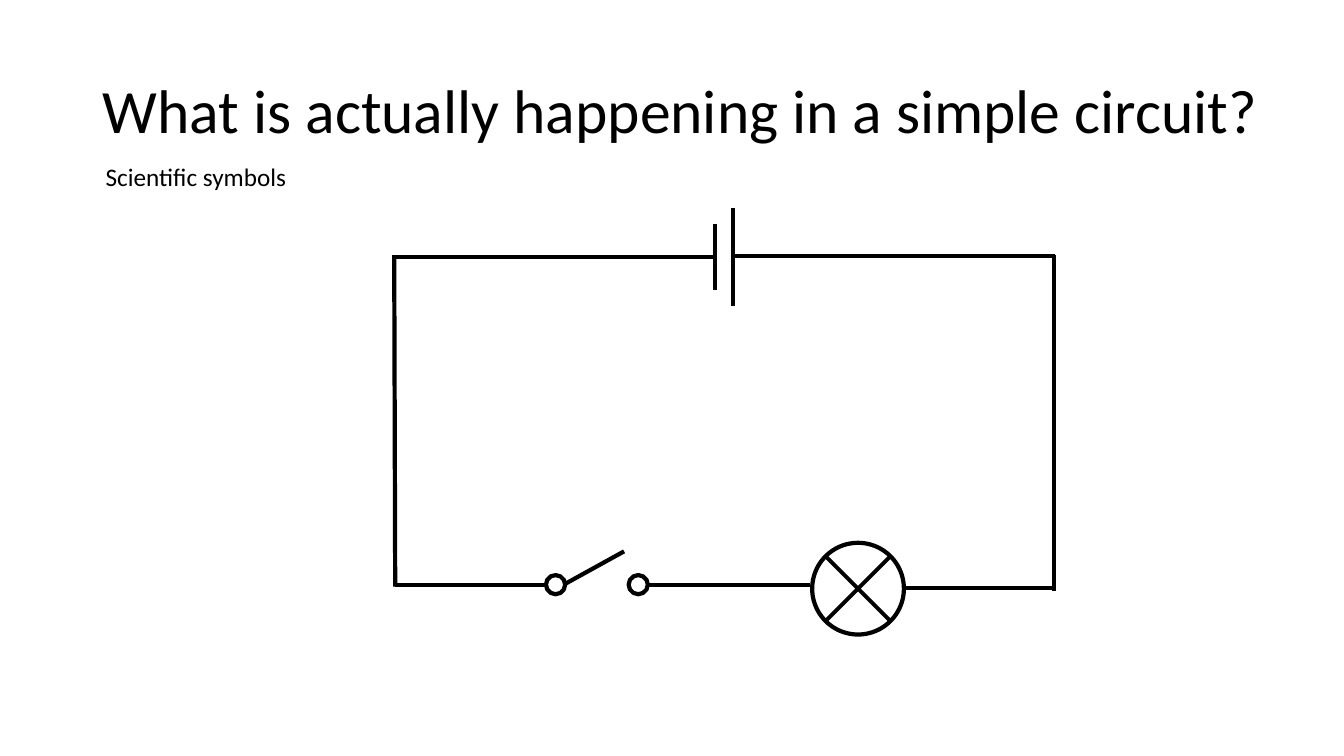
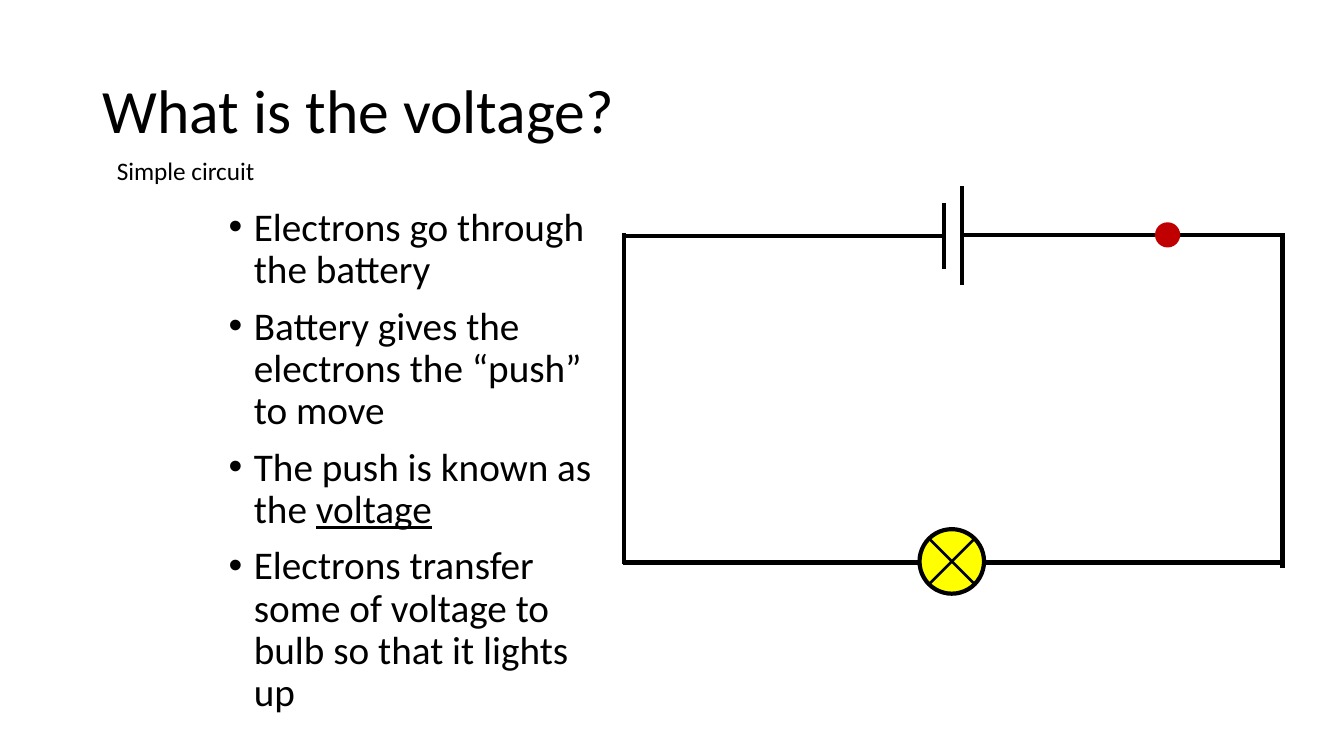
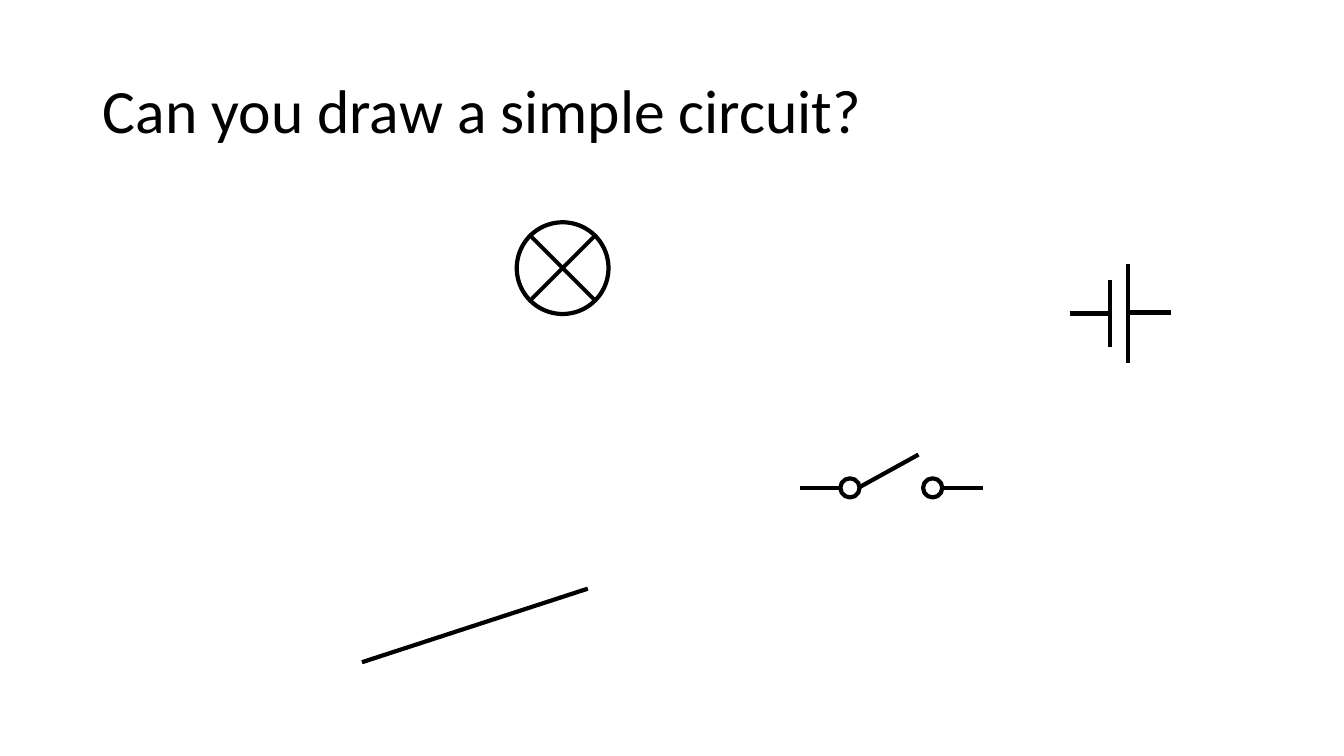
from lxml import etree
from pptx import Presentation
from pptx.dml.color import RGBColor
from pptx.enum.shapes import MSO_CONNECTOR, MSO_SHAPE
from pptx.enum.text import MSO_ANCHOR, MSO_AUTO_SIZE, PP_ALIGN
from pptx.oxml.ns import qn
from pptx.util import Inches, Pt

STRAIGHT = MSO_CONNECTOR.STRAIGHT
ELLIPSE, CROSS = MSO_SHAPE.OVAL, MSO_SHAPE.CROSS
LEFT, MIDDLE, NO_FIT = PP_ALIGN.LEFT, MSO_ANCHOR.MIDDLE, MSO_AUTO_SIZE.NONE

FONT = "Calibri"
COLOURS = {"ink": "000000", "glow": "FFFF00", "electron": "C00000"}
STROKE = 3
TITLE_LEFT, TITLE_TOP, TITLE_HEIGHT = 0.92, 0.4, 1.45

# Symbols: cell = long plate and wire height, switch = centre of the left
# contact, lamp = centre, diameter and fill. Wires: x1, y1, x2, y2.
SLIDES = [
    {
        "title": "What is actually happening in a simple circuit?",
        "title_width": 11.87,
        "caption": ("Scientific symbols", 0.95, 1.55, 2.27),
        "wires": [
            (3.9, 2.55, 6.69, 2.55), (7.61, 2.54, 10.46, 2.54),
            (3.91, 2.53, 3.92, 5.82), (10.45, 2.53, 10.45, 5.86),
            (3.92, 5.8, 5.01, 5.8), (6.82, 5.8, 8.03, 5.8),
            (8.98, 5.83, 10.45, 5.83),
        ],
        "cell": (7.27, 2.55),
        "switch": (5.51, 5.8),
        "lamp": (8.51, 5.84, 0.91, None),
    },
    {
        "title": "What is the voltage?",
        "caption": ("Simple circuit", 1.06, 1.49, 4.15),
        "bullets": [
            [("Electrons go through the battery", False)],
            [("Battery gives the electrons the “push” to move", False)],
            [("The push is known as the ", False), ("voltage", True)],
            [("Electrons transfer some of voltage to bulb so that it lights up", False)],
        ],
        "wires": [
            (6.18, 2.34, 8.96, 2.34), (9.88, 2.33, 12.73, 2.33),
            (6.19, 2.31, 6.19, 5.6), (12.72, 2.31, 12.72, 5.64),
            (6.18, 5.58, 12.72, 5.58),
        ],
        "cell": (9.54, 2.34),
        "lamp": (9.44, 5.57, 0.64, "glow"),
        "electron": (11.58, 2.33),
    },
    {
        "title": "Can you draw a simple circuit?",
        "wires": [(3.59, 6.57, 5.83, 5.84)],
        "cell": (11.19, 3.11),
        "switch": (8.43, 4.84),
        "lamp": (5.58, 2.66, 0.91, None),
    },
]


def colour(name):
    return RGBColor.from_string(COLOURS[name])


def set_font(font, size):
    font.name, font.size = FONT, Pt(size)
    font.color.rgb = colour("ink")


def add_title(page, text, width):
    title = page.shapes.title
    title.left, title.top = Inches(TITLE_LEFT), Inches(TITLE_TOP)
    title.width, title.height = Inches(width), Inches(TITLE_HEIGHT)
    frame = title.text_frame
    frame.text = text
    frame.auto_size = NO_FIT
    frame.vertical_anchor = MIDDLE
    para = frame.paragraphs[0]
    para.alignment, para.line_spacing = LEFT, 0.9
    set_font(para.font, 44)


def add_text_frame(page, left, top, width, height):
    box = page.shapes.add_textbox(*map(Inches, (left, top, width, height)))
    box.text_frame.word_wrap = True
    return box.text_frame


def add_caption(page, text, left, top, width):
    para = add_text_frame(page, left, top, width, 0.4).paragraphs[0]
    para.text = text
    set_font(para.font, 18)


def add_bullets(page, items):
    frame = add_text_frame(page, 2.17, 2.01, 3.83, 5.32)
    for index, spans in enumerate(items):
        para = frame.add_paragraph() if index else frame.paragraphs[0]
        properties = para._p.get_or_add_pPr()
        properties.set("marL", str(Inches(0.25)))
        properties.set("indent", str(-Inches(0.25)))
        etree.SubElement(properties, qn("a:buFont"), typeface="Arial")
        etree.SubElement(properties, qn("a:buChar"), char="•")
        para.line_spacing = 0.9
        if index:
            para.space_before = Pt(10)
        set_font(para.font, 28)
        for text, underlined in spans:
            span = para.add_run()
            span.text = text
            if underlined:
                span.font.underline = True


def add_wire(shapes, x1, y1, x2, y2):
    wire = shapes.add_connector(STRAIGHT, *map(Inches, (x1, y1, x2, y2)))
    wire.line.color.rgb = colour("ink")
    wire.line.width = Pt(STROKE)
    etree.SubElement(wire._element.spPr, qn("a:effectLst"))


def add_centred(shapes, kind, x, y, size, fill=None, outlined=True):
    corner = Inches(x - size / 2), Inches(y - size / 2)
    shape = shapes.add_shape(kind, *corner, Inches(size), Inches(size))
    shape.shadow.inherit = False
    if fill:
        shape.fill.solid()
        shape.fill.fore_color.rgb = colour(fill)
    else:
        shape.fill.background()
    if outlined:
        shape.line.color.rgb = colour("ink")
        shape.line.width = Pt(STROKE)
    else:
        shape.line.fill.background()
    return shape


def add_cell(shapes, x, y):
    short_x = x - 0.18
    add_wire(shapes, x, y - 0.49, x, y + 0.49)
    add_wire(shapes, short_x, y - 0.33, short_x, y + 0.33)
    add_wire(shapes, short_x - 0.4, y, short_x, y)
    add_wire(shapes, x + 0.02, y - 0.01, x + 0.42, y - 0.01)


def add_lamp(shapes, x, y, diameter, fill):
    add_centred(shapes, ELLIPSE, x, y, diameter, fill)
    cross = add_centred(shapes, CROSS, x, y, diameter - 0.03, "ink", outlined=False)
    cross.rotation = 45
    cross.adjustments[0] = 0.478


def add_switch(shapes, x, y):
    gap, radius, lead = 0.82, 0.1, 0.4
    right = x + gap
    for contact_x in (x, right):
        add_centred(shapes, ELLIPSE, contact_x, y, 0.19)
    add_wire(shapes, x - radius - lead, y, x - radius, y)
    add_wire(shapes, right + radius, y, right + radius + lead, y)
    add_wire(shapes, x + radius, y - 0.01, x + 0.68, y - 0.33)


SYMBOLS = {"cell": add_cell, "lamp": add_lamp, "switch": add_switch}


def build_slide(deck, content):
    page = deck.slides.add_slide(deck.slide_layouts[5])
    add_title(page, content["title"], content.get("title_width", 11.5))
    if "caption" in content:
        add_caption(page, *content["caption"])
    if "bullets" in content:
        add_bullets(page, content["bullets"])
    for ends in content["wires"]:
        add_wire(page.shapes, *ends)
    for name, add_symbol in SYMBOLS.items():
        if name in content:
            add_symbol(page.shapes.add_group_shape().shapes, *content[name])
    if "electron" in content:
        add_centred(page.shapes, ELLIPSE, *content["electron"], 0.25,
                    "electron", outlined=False)


def main():
    deck = Presentation()
    deck.slide_width, deck.slide_height = Inches(13.33), Inches(7.5)
    for content in SLIDES:
        build_slide(deck, content)
    deck.save("out.pptx")


if __name__ == "__main__":
    main()
